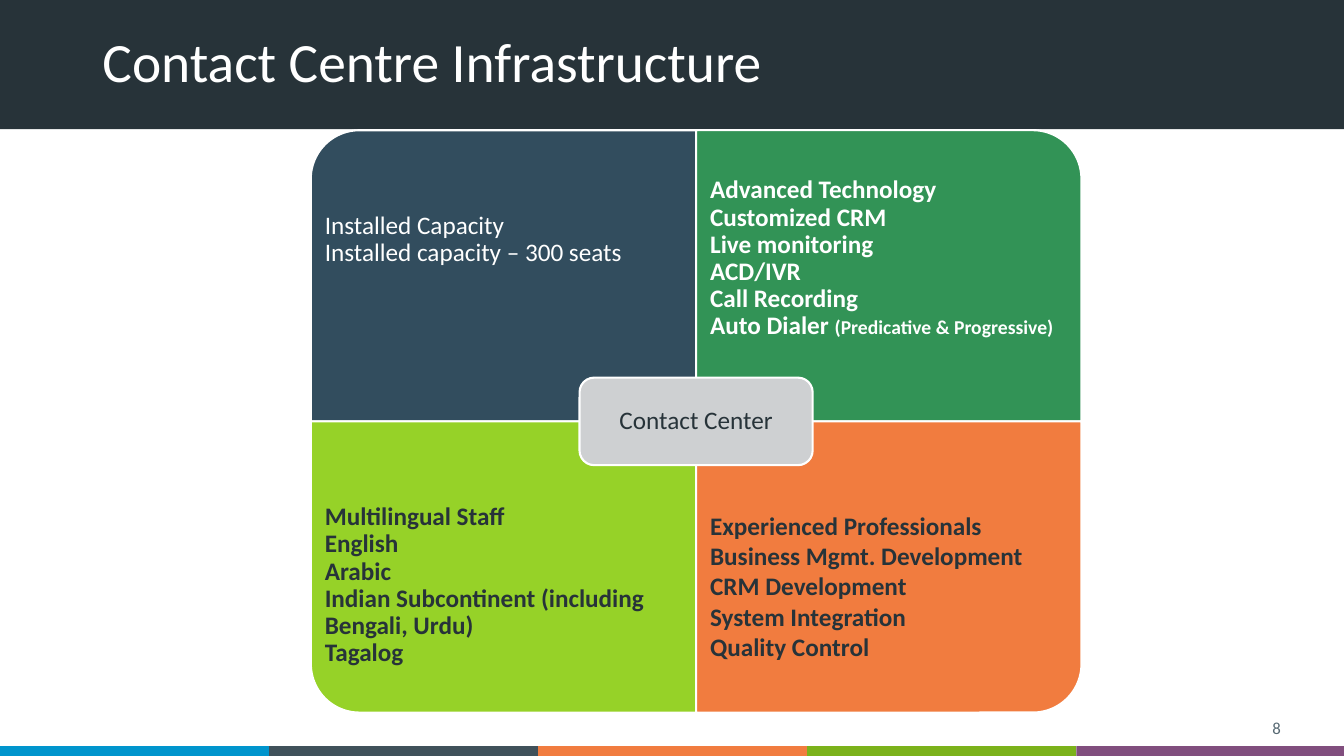
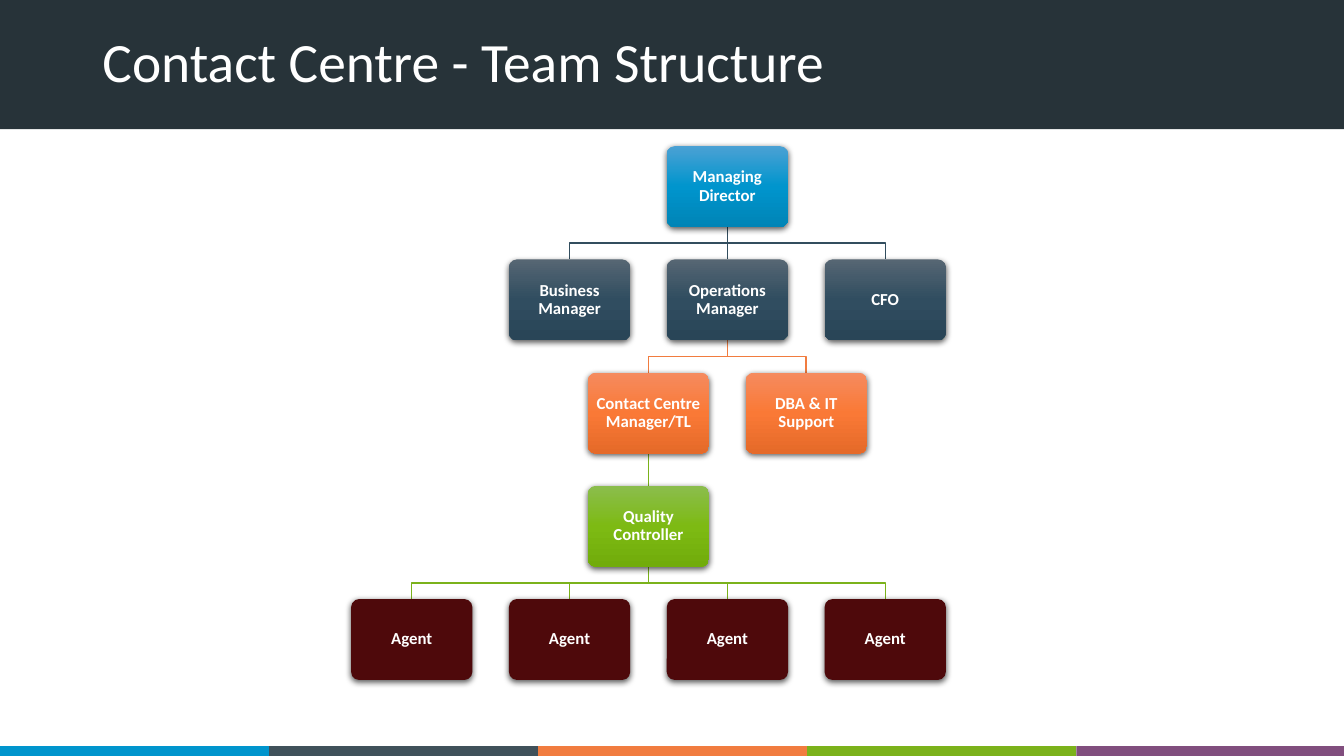
from pptx import Presentation
from pptx.dml.color import RGBColor
from pptx.enum import shapes, text
from pptx.oxml import parse_xml
from pptx.oxml.ns import nsdecls
from pptx.util import Pt

SLIDE_W, SLIDE_H = 960, 540
FONT = "Calibri"
DARK, WHITE, NAVY = "273339", "FFFFFF", "324D5E"
ORANGE, LIME = "F17C3F", "7BB21B"
STRIPES = ["0095CD", "40515A", ORANGE, LIME, "814E7E"]
STRIPE_W, STRIPE_H = 192.2, 7
SHAPE, ALIGN = shapes.MSO_SHAPE, text.PP_ALIGN


def rgb(value):
    return RGBColor.from_string(value)


def pts(*lengths):
    return [Pt(n) for n in lengths]


def set_text(s, lines, size, color, bold=False, align=ALIGN.LEFT, spacing=0.9, inset=None):
    """Each line is a string or a list of (text, size) runs."""
    tf = s.text_frame
    tf.word_wrap = True
    tf.vertical_anchor = text.MSO_ANCHOR.MIDDLE
    if inset is not None:
        tf.margin_left = tf.margin_right = tf.margin_top = tf.margin_bottom = Pt(inset)
    for i, line in enumerate(lines):
        p = tf.paragraphs[0] if i == 0 else tf.add_paragraph()
        p.alignment, p.line_spacing = align, spacing
        p.space_before = p.space_after = Pt(0)
        for words, run_size in [(line, size)] if isinstance(line, str) else line:
            r = p.add_run()
            r.text = words
            f = r.font
            f.name, f.size, f.bold = FONT, Pt(run_size), bold
            f.color.rgb = rgb(color)


def add_block(slide, kind, box, fill=None, outline=None):
    s = slide.shapes.add_shape(kind, *pts(*box))
    s.shadow.inherit = False
    if fill:
        s.fill.solid()
        s.fill.fore_color.rgb = rgb(fill)
    if outline:
        s.line.color.rgb = rgb(outline)
        s.line.width = Pt(1.5)
    else:
        s.line.fill.background()
    return s


# Shared slide furniture
def add_bands(layout, slide):
    """Draw the title band and foot stripes, then move them to the layout."""
    bands = [add_block(slide, SHAPE.RECTANGLE, (0, -0.5, SLIDE_W, 92.8), DARK)]
    for i, color in enumerate(STRIPES):
        left = i * STRIPE_W
        box = (left, SLIDE_H - STRIPE_H, min(STRIPE_W, SLIDE_W - left), STRIPE_H)
        bands.append(add_block(slide, SHAPE.RECTANGLE, box, color))
    for position, band in enumerate(bands, 2):
        layout.shapes.element.insert(position, band.element)


def add_titled_slide(prs, layout, title):
    slide = prs.slides.add_slide(layout)
    s = slide.shapes.title
    s.left, s.top, s.width, s.height = pts(66, 19.5, 828, 53)
    set_text(s, [title], 39.6, WHITE)
    return slide


def add_page_number(slide, number):
    s = slide.shapes.add_textbox(*pts(706, 509, 216, 22))
    set_text(s, [number], 12, "576973", align=ALIGN.RIGHT, spacing=1)


# Four quadrants around a hub: fill, text colour, bold, spacing, text shift, lines
QUADRANTS = [
    (NAVY, WHITE, False, 0.9, 0.3, ["Installed Capacity", "Installed capacity – 300 seats"]),
    ("329356", WHITE, True, 0.9, 13.8,
     ["Advanced Technology", "Customized CRM", "Live monitoring", "ACD/IVR", "Call Recording",
      [("Auto Dialer ", 18), ("(Predicative & Progressive)", 14)]]),
    ("96D228", DARK, True, 0.9, -12.7,
     ["Multilingual Staff", "English", "Arabic",
      "Indian Subcontinent (including Bengali, Urdu)", "Tagalog"]),
    (ORANGE, DARK, True, 1, -12.5,
     ["Experienced Professionals", "Business Mgmt. Development", "CRM Development",
      "System Integration", "Quality Control"]),
]
ROTATIONS = [270, 0, 180, 90]


def add_quadrants(slide, left, top, width, height):
    w, h = width / 2, height / 2
    text_h = h * 0.75
    for i, (fill, color, bold, spacing, shift, lines) in enumerate(QUADRANTS):
        row, col = divmod(i, 2)
        x, y = left + col * w, top + row * h
        # A quarter-turned shape swaps its width and height about its centre
        sw, sh = (h, w) if ROTATIONS[i] % 180 else (w, h)
        box = (x + (w - sw) / 2, y + (h - sh) / 2, sw, sh)
        s = add_block(slide, SHAPE.ROUND_1_RECTANGLE, box, fill, WHITE)
        s.rotation = ROTATIONS[i]
        label = slide.shapes.add_textbox(*pts(x, y + row * (h - text_h) + shift, w, text_h))
        set_text(label, lines, 18, color, bold, spacing=spacing, inset=10)
    hub_w, hub_h = 166.5, 62.5
    hub = add_block(slide, SHAPE.ROUNDED_RECTANGLE,
                    (left + w - hub_w / 2, top + h - hub_h / 2, hub_w, hub_h), "CED0D2", WHITE)
    set_text(hub, ["Contact Center"], 18, DARK, align=ALIGN.CENTER, inset=5)


# Organisation chart: gradient (or flat) colours by level
LEVEL_FILLS = [
    ["4BA1D4", "0095CD", "0084B6"],
    ["566673", "304D60", "294557"],
    ["F58B5F", "FA7936", "E56A29"],
    ["8BBD4D", "7DBA13", "71AC0B"],
    ["4E090B"],
]
LINK_COLORS = [NAVY, ORANGE, LIME, LIME]
# Each level lists (column, label)
LEVELS = [
    [(2, "Managing Director")],
    [(1, "Business Manager"), (2, "Operations Manager"), (3, "CFO")],
    [(1.5, "Contact Centre Manager/TL"), (2.5, "DBA & IT Support")],
    [(1.5, "Quality Controller")],
    [(col, "Agent") for col in range(4)],
]
PARENT_COLUMNS = [2, 2, 1.5, 1.5]


def add_link(slide, x1, y1, x2, y2, color):
    """Join parent to child: straight below, otherwise bent halfway down."""
    if x1 == x2:
        s = slide.shapes.add_connector(shapes.MSO_CONNECTOR.STRAIGHT, *pts(x1, y1, x2, y2))
        s.element.spPr.append(parse_xml(f'<a:effectLst {nsdecls("a")}/>'))
    else:
        middle = (y1 + y2) / 2
        outline = slide.shapes.build_freeform(*pts(x1, y1))
        corners = [(x1, middle), (x2, middle), (x2, y2)]
        outline.add_line_segments([pts(*corner) for corner in corners], close=False)
        s = outline.convert_to_shape()
        s.shadow.inherit = False
        s.fill.background()
    s.line.color.rgb = rgb(color)
    s.line.width = Pt(1)


def add_node(slide, box, colors, label):
    s = add_block(slide, SHAPE.ROUNDED_RECTANGLE, box, colors[0] if len(colors) == 1 else None)
    s.adjustments[0] = 0.1
    spPr = s.element.spPr
    if len(colors) > 1:
        stops = "".join(f'<a:gs pos="{i * 50000}"><a:srgbClr val="{c}"/></a:gs>'
                        for i, c in enumerate(colors))
        spPr.prstGeom.addnext(parse_xml(
            f'<a:gradFill {nsdecls("a")} rotWithShape="1"><a:gsLst>{stops}</a:gsLst>'
            '<a:lin ang="5400000" scaled="0"/></a:gradFill>'))
    # Soft shadow below the box
    spPr.find("{*}effectLst").append(parse_xml(
        f'<a:outerShdw {nsdecls("a")} blurRad="{Pt(4.5)}" dist="{Pt(1.5)}" dir="5400000" '
        'rotWithShape="0"><a:srgbClr val="000000"><a:alpha val="63000"/></a:srgbClr>'
        '</a:outerShdw>'))
    set_text(s, [label], 12, WHITE, True, ALIGN.CENTER, inset=3.6)


def add_org_chart(slide, left, top, width, height):
    node_w, node_h = 86.6, 57.8
    col_step = (width - node_w) / 3
    row_step = (height - node_h) / (len(LEVELS) - 1)

    def center(col):
        return left + node_w / 2 + col * col_step

    # Links from each parent to the level below
    for i, (parent, color) in enumerate(zip(PARENT_COLUMNS, LINK_COLORS)):
        start, end = top + i * row_step + node_h, top + (i + 1) * row_step
        for col, _ in LEVELS[i + 1]:
            add_link(slide, center(parent), start, center(col), end, color)
    # Boxes
    for i, (nodes, colors) in enumerate(zip(LEVELS, LEVEL_FILLS)):
        for col, label in nodes:
            box = (center(col) - node_w / 2, top + i * row_step, node_w, node_h)
            add_node(slide, box, colors, label)


def main():
    prs = Presentation()
    prs.slide_width, prs.slide_height = pts(SLIDE_W, SLIDE_H)
    layout = prs.slide_layouts[5]

    infrastructure = add_titled_slide(prs, layout, "Contact Centre Infrastructure")
    add_bands(layout, infrastructure)
    add_page_number(infrastructure, "8")
    add_quadrants(infrastructure, 222, 93, 550.5, 416)

    team = add_titled_slide(prs, layout, "Contact Centre - Team Structure")
    add_org_chart(team, 250.8, 104.4, 424.8, 381.3)

    prs.save("out.pptx")


if __name__ == "__main__":
    main()
